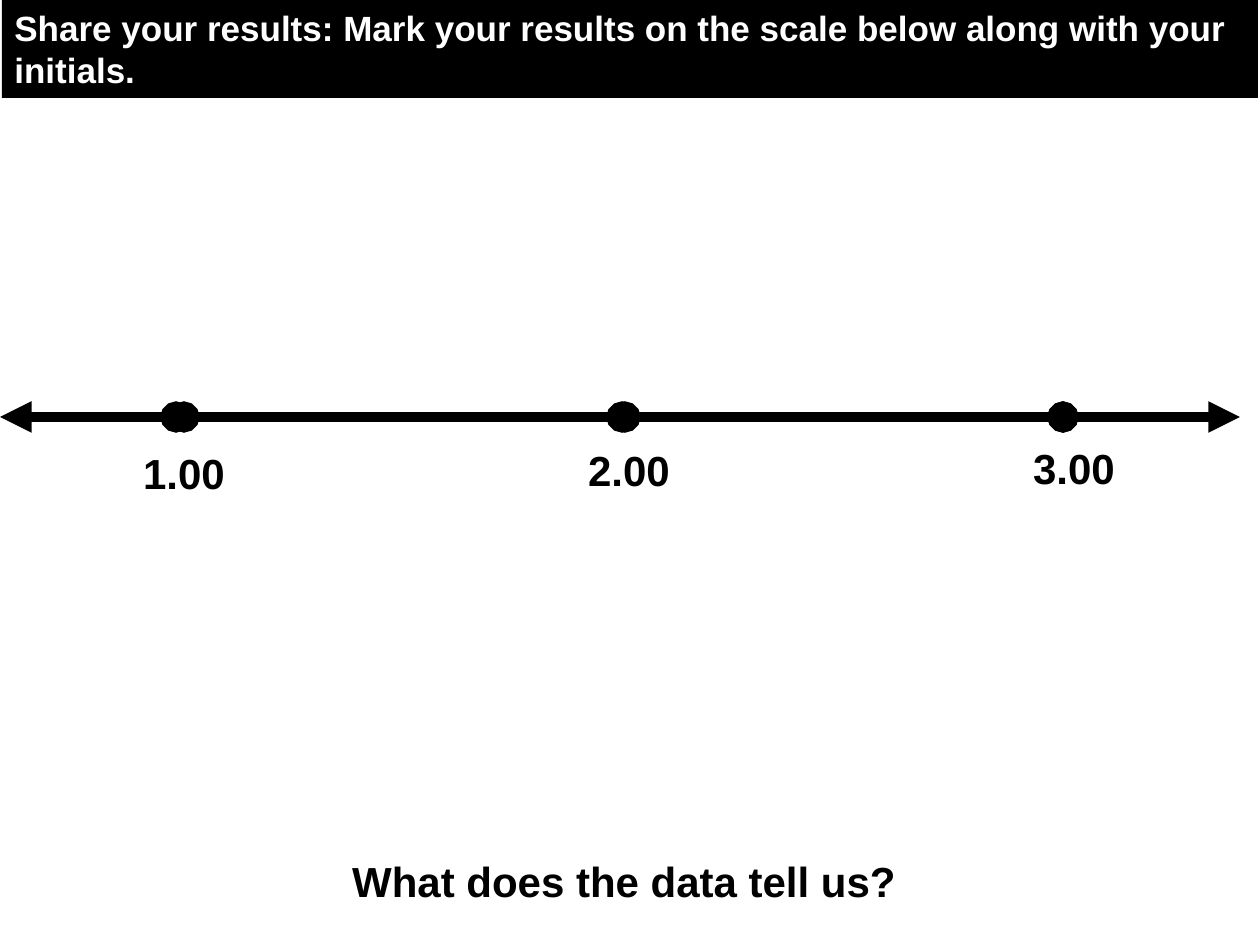
from pptx import Presentation
from pptx.dml.color import RGBColor
from pptx.enum.shapes import MSO_CONNECTOR, MSO_SHAPE
from pptx.enum.text import MSO_ANCHOR, MSO_AUTO_SIZE, PP_ALIGN
from pptx.oxml.ns import qn
from pptx.util import Emu, Pt
from lxml.etree import SubElement

EMU_PER_PX = 914400 / 126
COLORS = {"ink": "000000", "paper": "FFFFFF"}
AXIS_Y = 417
LABEL_LEFT, LABEL_STEP = 116, 445


def px(length):
    return Emu(round(length * EMU_PER_PX))


def rgb(name):
    return RGBColor.from_string(COLORS[name])


def write_text(box, text, size, color, align):
    frame = box.text_frame
    frame.word_wrap = True
    frame.auto_size = MSO_AUTO_SIZE.SHAPE_TO_FIT_TEXT
    frame.vertical_anchor = MSO_ANCHOR.TOP
    para = frame.paragraphs[0]
    para.text = text
    para.alignment = align
    para.font.name = "Arial"
    para.font.size = Pt(size)
    para.font.bold = True
    para.font.color.rgb = rgb(color)
    # Spacing relative to the line height has no public method.
    properties = para._p.get_or_add_pPr()
    spacing = properties.makeelement(qn("a:spcBef"))
    SubElement(spacing, qn("a:spcPct"), val="50000")
    properties.insert(0, spacing)


def add_banner(page, text):
    banner = page.shapes.add_shape(MSO_SHAPE.RECTANGLE, px(2), 0, px(1256), px(98))
    banner.shadow.inherit = False
    banner.fill.solid()
    banner.fill.fore_color.rgb = rgb("ink")
    banner.line.fill.background()
    write_text(banner, text, 20, "paper", PP_ALIGN.LEFT)


def add_label(page, text, left, top, width):
    box = page.shapes.add_textbox(px(left), px(top), px(width), px(64))
    write_text(box, text, 24, "ink", PP_ALIGN.CENTER)


def add_axis_segment(page, start, end, end_mark):
    """Draw a piece of the scale with a dot at its start and end_mark at its end."""
    segment = page.shapes.add_connector(
        MSO_CONNECTOR.STRAIGHT, px(start), px(AXIS_Y), px(end), px(AXIS_Y))
    segment.line.width = Pt(6)
    segment.line.color.rgb = rgb("ink")
    outline = segment.line._get_or_add_ln()
    SubElement(outline, qn("a:headEnd"), type="oval")
    SubElement(outline, qn("a:tailEnd"), type=end_mark)
    SubElement(segment._element.spPr, qn("a:effectLst"))


def main():
    deck = Presentation()
    deck.slide_width, deck.slide_height = px(1260), px(945)
    page = deck.slides.add_slide(deck.slide_layouts[6])

    add_banner(page, "Share your results: Mark your results on the scale below "
                     "along with your initials.")
    add_label(page, "What does the data tell us?", 4, 849, 1240)

    for start, end, end_mark in [(184, 625, "oval"), (622, 1063, "oval"),
                                 (1063, 1240, "triangle"), (176, 0, "triangle")]:
        add_axis_segment(page, start, end, end_mark)

    for index, (value, top) in enumerate([("1.00", 441), ("2.00", 438), ("3.00", 436)]):
        add_label(page, value, LABEL_LEFT + index * LABEL_STEP, top, 136)

    deck.save("out.pptx")


if __name__ == "__main__":
    main()
